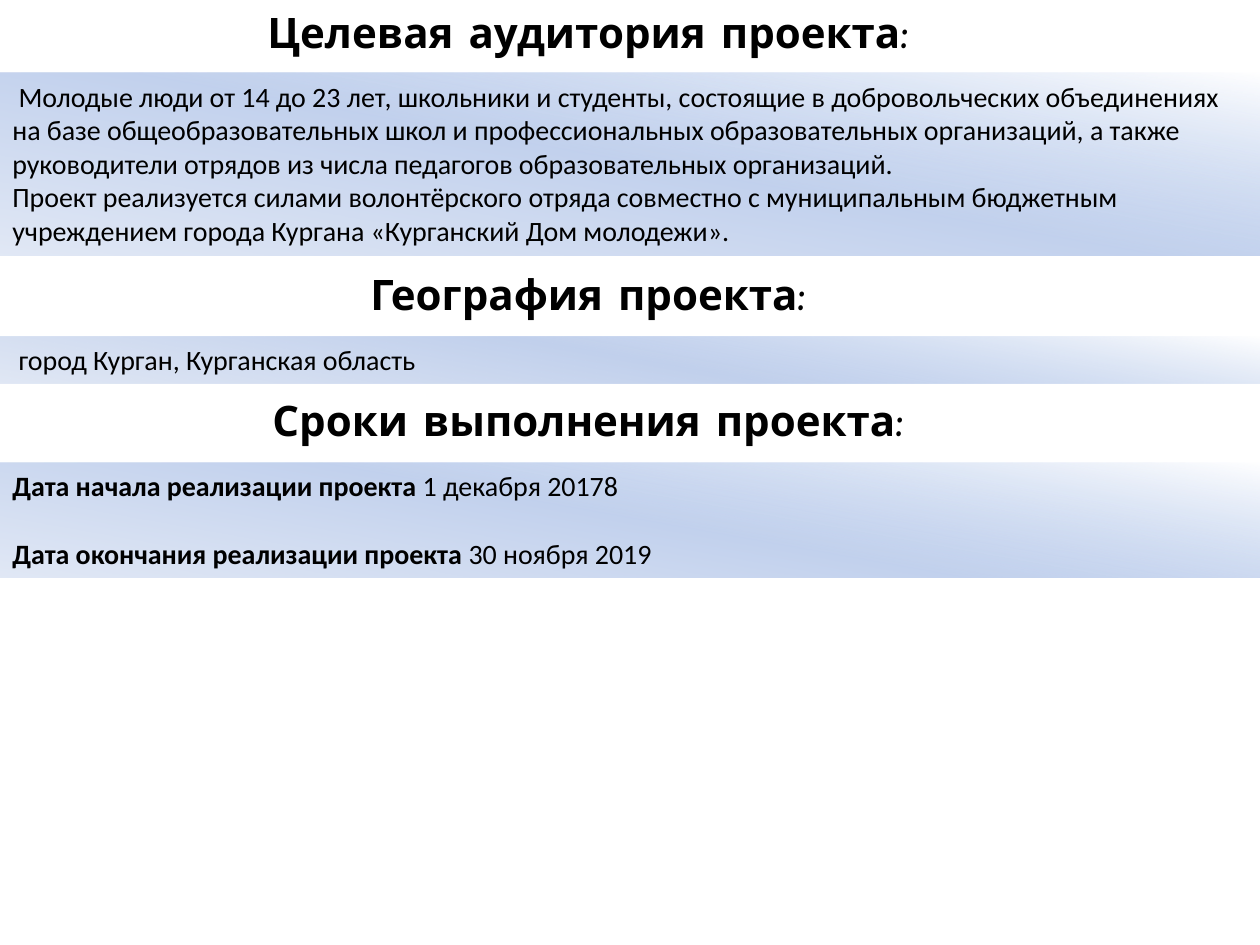
"""Build the slide on the audience, geography and dates of a project."""
from dataclasses import dataclass

from pptx import Presentation
from pptx.dml.color import RGBColor
from pptx.enum.shapes import MSO_SHAPE
from pptx.enum.text import MSO_ANCHOR, MSO_AUTO_SIZE, PP_ALIGN
from pptx.oxml import parse_xml
from pptx.oxml.ns import nsdecls, qn
from pptx.util import Inches, Pt


@dataclass(frozen=True)
class Theme:
    ink: RGBColor = RGBColor(0, 0, 0)
    head_font: str = "Comic Neue"
    body_font: str = "Calibri"
    head_size: Pt = Pt(24)
    body_size: Pt = Pt(16)
    gap: Pt = Pt(19.5)
    band: str = (
        f'<a:gradFill {nsdecls("a")} rotWithShape="1"><a:gsLst>'
        '<a:gs pos="0"><a:srgbClr val="9AB5E4"><a:alpha val="0"/></a:srgbClr></a:gs>'
        '<a:gs pos="50000"><a:srgbClr val="C2D1ED"/></a:gs>'
        '<a:gs pos="100000"><a:srgbClr val="E1E8F5"/></a:gs>'
        '</a:gsLst><a:lin ang="6000000" scaled="0"/></a:gradFill>'
    )


theme = Theme()


def add_run(para, text, font, size, bold):
    run = para.add_run()
    run.text = text
    run.font.name = font
    run.font.size = size
    run.font.bold = bold
    run.font.color.rgb = theme.ink


def set_frame(shape):
    frame = shape.text_frame
    frame.word_wrap = True
    frame.auto_size = MSO_AUTO_SIZE.SHAPE_TO_FIT_TEXT
    frame.vertical_anchor = MSO_ANCHOR.TOP
    return frame


parts = [
    ("Целевая аудитория проекта:", 0, 0.58, 1.45, Inches(0.05), Pt(0), [
        [("Молодые люди от 14 до 23 лет, школьники и студенты, состоящие в "
          "добровольческих объединениях на базе общеобразовательных школ и "
          "профессиональных образовательных организаций, а также руководители "
          "отрядов из числа педагогов образовательных организаций.", False)],
        [("Проект реализуется силами волонтёрского отряда совместно с "
          "муниципальным бюджетным учреждением города Кургана "
          "«Курганский Дом молодежи».", False)],
    ]),
    ("География проекта:", 2.08, 2.67, 0.37, Inches(0.05), Pt(0), [
        [("город Курган, Курганская область", False)],
    ]),
    ("Сроки выполнения проекта:", 3.08, 3.67, 0.91, Inches(0), theme.gap, [
        [("Дата начала реализации проекта ", True), ("1 декабря 20178", False)],
        [("Дата окончания реализации проекта ", True), ("30 ноября 2019", False)],
    ]),
]

deck = Presentation()
deck.slide_width, deck.slide_height = Inches(10), Inches(7.5)
slide = deck.slides.add_slide(deck.slide_layouts[5])

for num, (title, head_top, band_top, height, indent, gap, paras) in enumerate(parts):
    band = slide.shapes.add_shape(
        MSO_SHAPE.RECTANGLE, Inches(0), Inches(band_top), Inches(10), Inches(height))
    band.shadow.inherit = False
    band.line.fill.background()
    band.fill.gradient()
    props = band.element.spPr
    props.replace(props.find(qn("a:gradFill")), parse_xml(theme.band))
    frame = set_frame(band)
    for row, runs in enumerate(paras):
        para = frame.add_paragraph() if row else frame.paragraphs[0]
        para.alignment = PP_ALIGN.LEFT
        if row:
            para.space_before = gap
        else:
            para._p.get_or_add_pPr().set("indent", str(indent))
        for text, bold in runs:
            add_run(para, text, theme.body_font, theme.body_size, bold)

    place = Inches(0.67), Inches(head_top), Inches(8), Inches(0.5)
    if num:
        head = slide.shapes.add_textbox(*place)
    else:
        head = slide.shapes.title
        head.left, head.top, head.width, head.height = place
    para = set_frame(head).paragraphs[0]
    para.alignment = PP_ALIGN.CENTER
    add_run(para, title, theme.head_font, theme.head_size, True)

deck.save("out.pptx")
